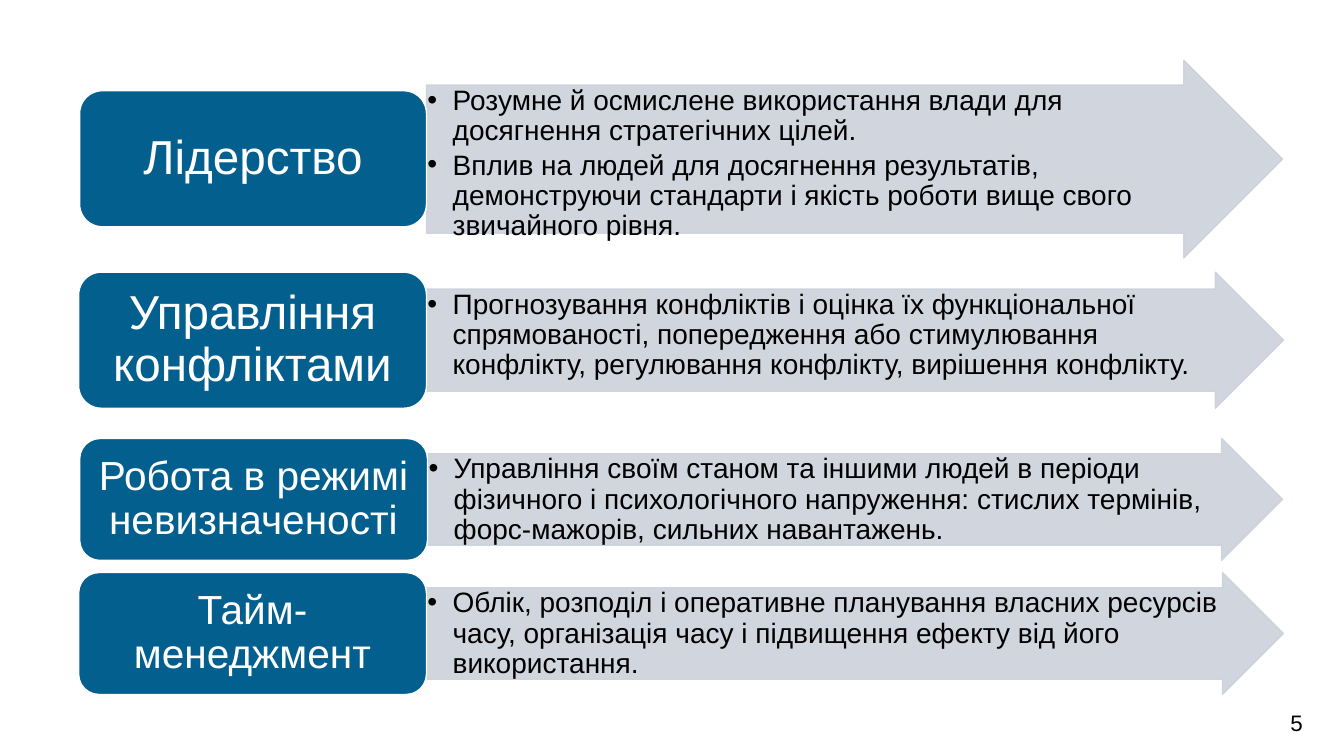
from dataclasses import dataclass

from lxml.etree import SubElement
from pptx import Presentation
from pptx.dml.color import RGBColor
from pptx.enum.shapes import MSO_SHAPE
from pptx.enum.text import MSO_ANCHOR, PP_ALIGN
from pptx.oxml.ns import qn
from pptx.slide import Slide
from pptx.util import Pt

EMU_PER_PX = 9144
FONT = "Arial"
COLOURS = {"label": "035F8E", "arrow": "CCD2DB", "white": "FFFFFF", "black": "000000"}


@dataclass(frozen=True)
class Skill:
    name: str
    points: tuple[str, ...]
    left: int
    arrow_left: int
    arrow_right: int
    arrow_top: int
    arrow_height: int
    label_height: int
    label_size: int


SKILLS = (
    Skill("Лідерство",
          ("Розумне й осмислене використання влади для досягнення стратегічних цілей.",
           "Вплив на людей для досягнення результатів, демонструючи стандарти і якість "
           "роботи вище свого звичайного рівня."),
          79, 423, 1272, 60, 196, 135, 34),
    Skill("Управління конфліктами",
          ("Прогнозування конфліктів і оцінка їх функціональної спрямованості, попередження "
           "або стимулювання конфлікту, регулювання конфлікту, вирішення конфлікту.",),
          78, 423, 1273, 270, 135, 135, 34),
    Skill("Робота в режимі невизначеності",
          ("Управління своїм станом та іншими людей в періоди фізичного і психологічного "
           "напруження: стислих термінів, форс-мажорів, сильних навантажень.",),
          79, 424, 1272, 435, 121, 121, 29),
    Skill("Тайм-менеджмент",
          ("Облік, розподіл і оперативне планування власних ресурсів часу, організація часу "
           "і підвищення ефекту від його використання.",),
          78, 423, 1273, 568, 121, 121, 29),
)


def px(length: int) -> int:
    return length * EMU_PER_PX


def colour(name: str) -> RGBColor:
    return RGBColor.from_string(COLOURS[name])


def add_block(slide: Slide, kind: MSO_SHAPE, box: tuple[int, int, int, int],
              fill: str, line: str, insets: tuple[int, int]):
    """Add a filled shape whose insets are horizontal, then vertical."""
    shape = slide.shapes.add_shape(kind, *map(px, box))
    shape.shadow.inherit = False
    shape.fill.solid()
    shape.fill.fore_color.rgb = colour(fill)
    shape.line.color.rgb = colour(line)
    shape.line.width = Pt(1)
    frame = shape.text_frame
    frame.word_wrap = True
    frame.margin_left = frame.margin_right = px(insets[0])
    frame.margin_top = frame.margin_bottom = px(insets[1])
    return shape


def format_font(paragraph, size: int, colour_name: str) -> None:
    for run in paragraph.runs:
        run.font.name = FONT
        run.font.size = Pt(size)
        run.font.color.rgb = colour(colour_name)


def add_bullet(paragraph, indent: int) -> None:
    properties = paragraph._p.get_or_add_pPr()
    properties.set("marL", str(px(indent)))
    properties.set("indent", str(-px(indent)))
    SubElement(properties, qn("a:buFont"), typeface=FONT)
    SubElement(properties, qn("a:buChar"), char="•")


def add_arrow(slide: Slide, skill: Skill) -> None:
    box = (skill.arrow_left, skill.arrow_top,
           skill.arrow_right - skill.arrow_left, skill.arrow_height)
    arrow = add_block(slide, MSO_SHAPE.RIGHT_ARROW, box, "arrow", "arrow", (1, 1))
    arrow.adjustments[0] = 0.75
    arrow.adjustments[1] = 0.5
    for rgb in arrow._element.spPr.iter(qn("a:srgbClr")):
        SubElement(rgb, qn("a:alpha"), val="90000")
    frame = arrow.text_frame
    frame.vertical_anchor = MSO_ANCHOR.TOP
    frame.text = "\n".join(skill.points)
    for paragraph in frame.paragraphs:
        add_bullet(paragraph, 25)
        paragraph.level = 1
        paragraph.alignment = PP_ALIGN.LEFT
        paragraph.line_spacing = 0.9
        paragraph.space_after = Pt(3)
        format_font(paragraph, 20, "black")


def add_label(slide: Slide, skill: Skill) -> None:
    top = skill.arrow_top + (skill.arrow_height - skill.label_height) // 2
    box = (skill.left, top, skill.arrow_left - skill.left, skill.label_height)
    inset = round(skill.label_size * 0.4)
    label = add_block(slide, MSO_SHAPE.ROUNDED_RECTANGLE, box, "label", "white",
                      (inset, inset // 2))
    label.text_frame.vertical_anchor = MSO_ANCHOR.MIDDLE
    label.text_frame.text = skill.name
    paragraph = label.text_frame.paragraphs[0]
    paragraph.alignment = PP_ALIGN.CENTER
    paragraph.line_spacing = 0.9
    format_font(paragraph, skill.label_size, "white")


def add_page_number(slide: Slide, number: int) -> None:
    frame = slide.shapes.add_textbox(*map(px, (1254, 699, 64, 37))).text_frame
    frame.word_wrap = True
    frame.text = str(number)
    frame.paragraphs[0].alignment = PP_ALIGN.CENTER
    format_font(frame.paragraphs[0], 16, "black")


def main() -> None:
    presentation = Presentation()
    presentation.slide_width = px(1333)
    presentation.slide_height = px(750)
    slide = presentation.slides.add_slide(presentation.slide_layouts[6])
    for skill in SKILLS:
        add_arrow(slide, skill)
        add_label(slide, skill)
    add_page_number(slide, 5)
    presentation.save("out.pptx")


if __name__ == "__main__":
    main()
